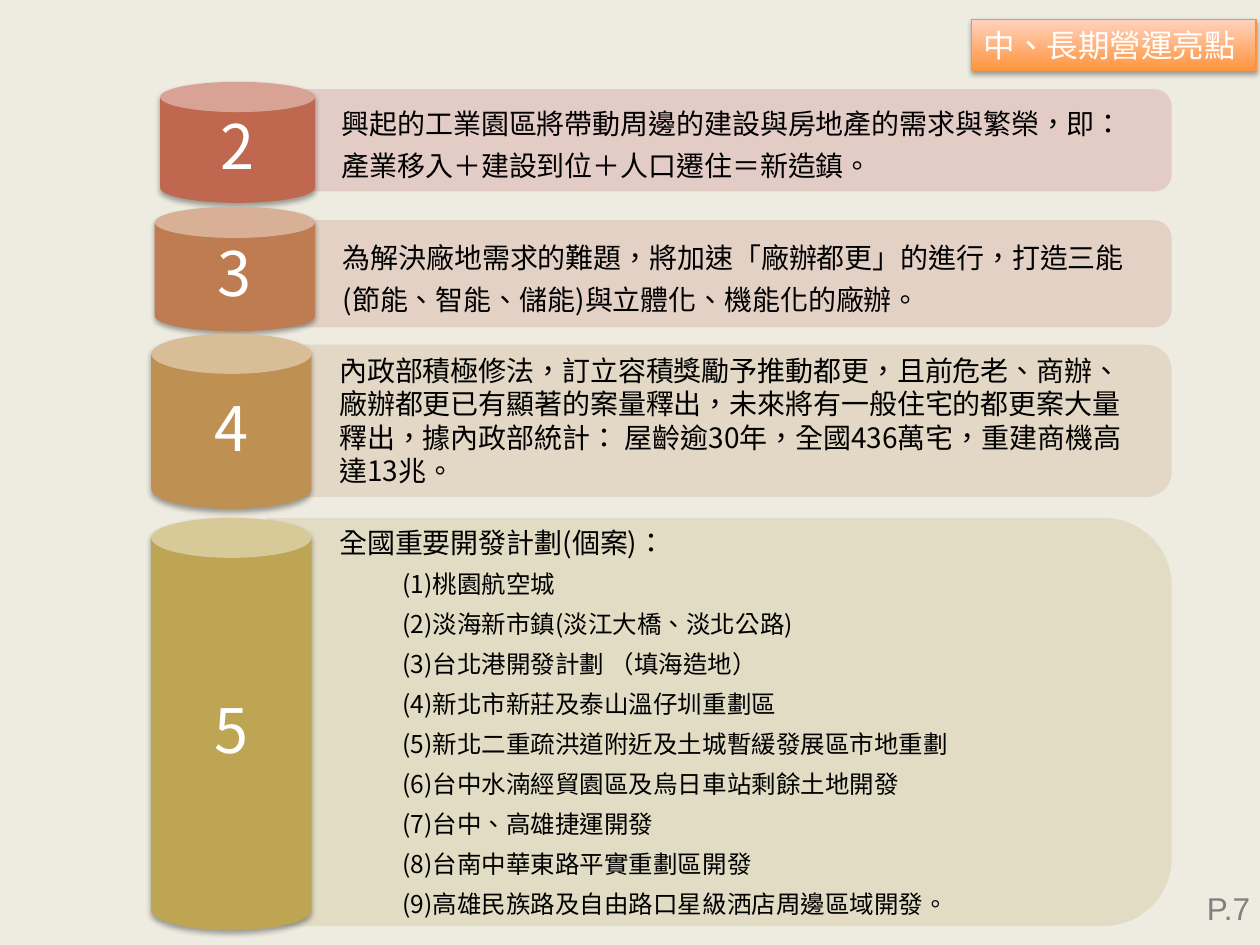
from dataclasses import dataclass

from lxml import etree
from pptx import Presentation
from pptx import util as u
from pptx.dml.color import RGBColor
from pptx.enum import shapes, text
from pptx.oxml.ns import qn


@dataclass(frozen=True)
class Theme:
    background: str = "EEECE1"
    ink: str = "000000"
    white: str = "FFFFFF"
    grey: str = "808080"
    tag_line: str = "F69240"
    tag_bottom: str = "FF953E"
    tag_top: str = "FFD2BD"
    font: str = "Noto Sans CJK SC"
    page_font: str = "Arial"
    number_size: int = 35
    title_size: int = 18
    body_size: int = 16
    item_size: int = 14


def rgb(value):
    return RGBColor.from_string(value)


def box(left, top, width, height):
    return [u.Cm(n) for n in (left, top, width, height)]


class SlideBuilder:
    def __init__(self, slide, theme):
        self.slide = slide
        self.theme = theme
        slide.background.fill.solid()
        slide.background.fill.fore_color.rgb = rgb(theme.background)

    def style(self, paragraph, size, color, font=None):
        font = font or self.theme.font
        for run in paragraph.runs:
            run.font.size = u.Pt(size)
            run.font.name = font
            run.font.color.rgb = rgb(color)
            props = run.font._element
            props.set("lang", "zh-TW")
            latin = props.find(qn("a:latin"))
            east_asian = etree.Element(qn("a:ea"), typeface=font)
            latin.addnext(east_asian)

    def frame(self, shape, anchor, margin_x, margin_y):
        frame = shape.text_frame
        frame.word_wrap = True
        frame.vertical_anchor = anchor
        frame.margin_left = frame.margin_right = u.Cm(margin_x)
        frame.margin_top = frame.margin_bottom = u.Cm(margin_y)
        return frame

    def drop_shadow(self, shape):
        shape.shadow.inherit = False
        effects = shape._element.spPr.find(qn("a:effectLst"))
        shadow = etree.SubElement(
            effects, qn("a:outerShdw"), blurRad=str(u.Pt(3.1)),
            dist=str(u.Pt(1.8)), dir="5400000", rotWithShape="0")
        black = etree.SubElement(shadow, qn("a:srgbClr"), val="000000")
        etree.SubElement(black, qn("a:alpha"), val="35000")

    def title(self, wording, place):
        tag = self.slide.shapes.title
        tag.left, tag.top, tag.width, tag.height = place
        tag.fill.gradient()
        tag.fill.gradient_angle = 90
        stops = tag.fill.gradient_stops
        for stop, color in zip(stops, (self.theme.tag_bottom, self.theme.tag_top)):
            stop.color.rgb = rgb(color)
        tag.line.color.rgb = rgb(self.theme.tag_line)
        tag.line.width = u.Pt(0.75)
        self.drop_shadow(tag)
        frame = self.frame(tag, text.MSO_ANCHOR.TOP, 0.25, 0.13)
        frame.auto_size = text.MSO_AUTO_SIZE.NONE
        frame.text = wording
        frame.paragraphs[0].alignment = text.PP_ALIGN.LEFT
        self.style(frame.paragraphs[0], self.theme.title_size, self.theme.white)

    def panel(self, place, color):
        # Two rounded corners face right: a quarter turn about the centre
        left, top, width, height = place
        turn = (width - height) // 2
        panel = self.slide.shapes.add_shape(
            shapes.MSO_SHAPE.ROUND_2_SAME_RECTANGLE,
            left + turn, top - turn, height, width)
        panel.rotation = 90
        panel.shadow.inherit = False
        panel.fill.solid()
        panel.fill.fore_color.rgb = rgb(color)
        etree.SubElement(panel._element.spPr.find(".//" + qn("a:srgbClr")),
                         qn("a:alpha"), val="90000")
        panel.line.fill.background()

    def body(self, place, lead, items, spacing):
        frame = self.frame(self.slide.shapes.add_textbox(*place),
                           text.MSO_ANCHOR.MIDDLE, 0.69, 0.36)
        frame.text = "\n".join([lead, *items])
        for index, paragraph in enumerate(frame.paragraphs):
            paragraph.line_spacing = spacing
            paragraph.space_after = u.Pt(6)
            if index:
                paragraph._p.get_or_add_pPr().set("marL", str(u.Cm(1.27)))
            size = self.theme.item_size if index else self.theme.body_size
            self.style(paragraph, size, self.theme.ink)

    def can(self, place, number, color):
        can = self.slide.shapes.add_shape(shapes.MSO_SHAPE.CAN, *place)
        can.fill.solid()
        can.fill.fore_color.rgb = rgb(color)
        can.line.fill.background()
        self.drop_shadow(can)
        frame = self.frame(can, text.MSO_ANCHOR.MIDDLE, 0.38, 0.18)
        frame.text = number
        frame.paragraphs[0].alignment = text.PP_ALIGN.CENTER
        frame.paragraphs[0].line_spacing = 0.9
        self.style(frame.paragraphs[0], self.theme.number_size, self.theme.white)

    def page_number(self, wording, place):
        frame = self.frame(self.slide.shapes.add_textbox(*place),
                           text.MSO_ANCHOR.TOP, 0, 0.13)
        frame.text = wording
        frame.paragraphs[0].alignment = text.PP_ALIGN.CENTER
        self.style(frame.paragraphs[0], self.theme.title_size,
                   self.theme.grey, self.theme.page_font)


PROJECTS = [
    "桃園航空城",
    "淡海新市鎮(淡江大橋、淡北公路)",
    "台北港開發計劃 （填海造地）",
    "新北市新莊及泰山溫仔圳重劃區",
    "新北二重疏洪道附近及土城暫緩發展區市地重劃",
    "台中水湳經貿園區及烏日車站剩餘土地開發",
    "台中、高雄捷運開發",
    "台南中華東路平實重劃區開發",
    "高雄民族路及自由路口星級洒店周邊區域開發。",
]

# number, can colour, panel colour, can, panel, text box, line spacing, lead, items
HIGHLIGHTS = [
    ("2", "BF674F", "E2C9C2", box(3.23, 1.65, 3.12, 2.44),
     box(5.87, 1.8, 17.75, 2.06), box(6.2, 1.9, 17.27, 1.85), 1.25,
     "興起的工業園區將帶動周邊的建設與房地產的需求與繁榮，即：產業移入＋建設到位＋人口遷住＝新造鎮。", []),
    ("3", "BF7C50", "E2CFC2", box(3.12, 4.17, 3.23, 2.51),
     box(5.46, 4.44, 18.16, 2.16), box(6.22, 4.55, 17.25, 1.96), 1.25,
     "為解決廠地需求的難題，將加速「廠辦都更」的進行，打造三能(節能、智能、儲能)與立體化、機能化的廠辦。", []),
    ("4", "BE9152", "E2D5C3", box(3.05, 6.73, 3.23, 3.53),
     box(5.38, 6.95, 18.24, 3.07), box(6.15, 7.09, 17.32, 2.77), 1.0,
     "內政部積極修法，訂立容積獎勵予推動都更，且前危老、商辦、廠辦都更已有顯著的案量釋出，"
     "未來將有一般住宅的都更案大量釋出，據內政部統計： 屋齡逾30年，全國436萬宅，重建商機高達13兆。", []),
    ("5", "BDA554", "E1DBC3", box(3.05, 10.44, 3.23, 8.31),
     box(5.38, 10.44, 18.24, 8.23), box(6.15, 10.64, 17.32, 7.82), 1.0,
     "全國重要開發計劃(個案)：",
     [f"({n}){project}" for n, project in enumerate(PROJECTS, 1)]),
]


def main():
    deck = Presentation()
    deck.slide_width, deck.slide_height = u.Cm(25.4), u.Cm(19.05)
    builder = SlideBuilder(deck.slides.add_slide(deck.slide_layouts[5]), Theme())

    # Heading tag and page number
    builder.title("中、長期營運亮點", box(19.58, 0.4, 5.74, 1.02))
    builder.page_number("P.7", box(24.13, 17.8, 1.27, 1.02))

    # Numbered highlights: panel, its wording, then the can over the left end
    for number, can_color, panel_color, can, panel, wording, spacing, lead, items in HIGHLIGHTS:
        builder.panel(panel, panel_color)
        builder.body(wording, lead, items, spacing)
        builder.can(can, number, can_color)

    deck.save("out.pptx")


if __name__ == "__main__":
    main()
